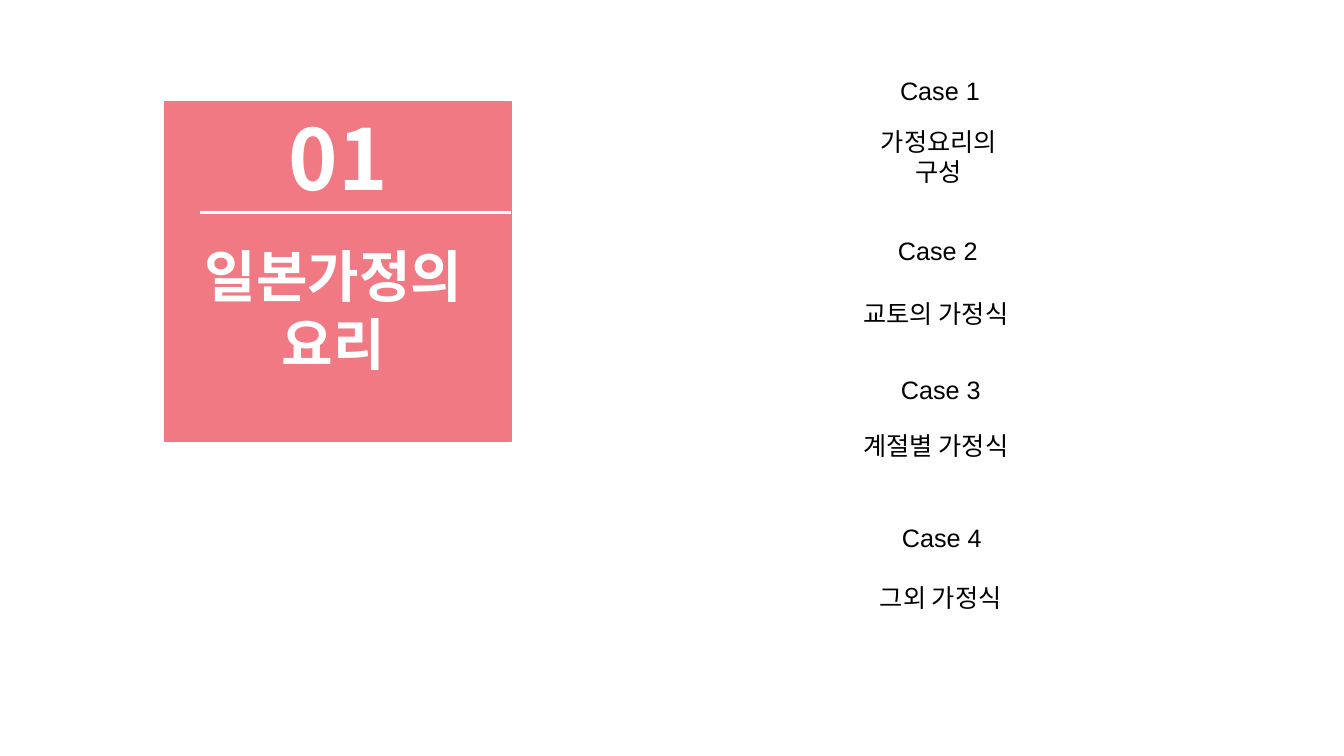
from lxml import etree
from pptx import Presentation
from pptx import util as u
from pptx.dml.color import RGBColor
from pptx.enum import shapes, text
from pptx.oxml import ns

KOREAN, LATIN = "Noto Sans CJK KR", "Arial"
PINK, WHITE, BLACK = "F07983", "FFFFFF", "000000"


def colour(hex_string):
    return RGBColor.from_string(hex_string)


class SlideBuilder:
    def __init__(self, deck):
        self.slide = deck.slides.add_slide(deck.slide_layouts[5])

    def panel(self, left, top, width, height, fill):
        panel = self.slide.shapes.add_shape(
            shapes.MSO_SHAPE.RECTANGLE, *map(u.Pt, (left, top, width, height)))
        panel.shadow.inherit = False
        panel.fill.solid()
        panel.fill.fore_color.rgb = colour(fill)
        panel.line.color.rgb = colour(fill)
        panel.line.width = u.Pt(1)

    def rule(self, left, right, y, stroke, weight):
        rule = self.slide.shapes.add_connector(
            shapes.MSO_CONNECTOR.STRAIGHT, *map(u.Pt, (left, y, right, y)))
        rule.line.color.rgb = colour(stroke)
        rule.line.width = u.Pt(weight)
        etree.SubElement(rule._element.spPr, ns.qn("a:effectLst"))

    def title(self, words, box, **style):
        title = self.slide.shapes.title
        title.left, title.top, title.width, title.height = map(u.Pt, box)
        # Bring the title in front of the panel
        title.element.getparent().append(title.element)
        self.set_words(title, words, **style)

    def label(self, words, box, **style):
        self.set_words(self.slide.shapes.add_textbox(*map(u.Pt, box)), words, **style)

    def set_words(self, holder, words, size=18, face=KOREAN, ink=BLACK,
                  bold=False, centred=False):
        frame = holder.text_frame
        frame.word_wrap = True
        frame.auto_size = text.MSO_AUTO_SIZE.SHAPE_TO_FIT_TEXT
        frame.vertical_anchor = text.MSO_ANCHOR.TOP
        frame.text = words
        paragraph = frame.paragraphs[0]
        paragraph.alignment = text.PP_ALIGN.CENTER if centred else text.PP_ALIGN.LEFT
        font = paragraph.font
        font.size, font.bold, font.name = u.Pt(size), bold, face
        font.color.rgb = colour(ink)
        # Korean glyphs take the East Asian typeface
        defaults = paragraph._p.pPr.find(ns.qn("a:defRPr"))
        etree.SubElement(defaults, ns.qn("a:ea"), typeface=face)


def main():
    deck = Presentation()
    deck.slide_width, deck.slide_height = u.Pt(960), u.Pt(540)
    page = SlideBuilder(deck)

    # Chapter panel
    heading = dict(ink=WHITE, bold=True, centred=True)
    page.panel(117.4, 72.7, 247.7, 242.6, PINK)
    page.rule(142.6, 365, 152, WHITE, 2.25)
    page.label("01", (155.5, 72.7, 172, 80), size=60, **heading)
    page.title("일본가정의 요리", (111, 169.2, 254.2, 104.4), size=40, **heading)

    # Cases: label left and top, dish, dish box, centred
    cases = [
        (635.8, 50.4, "가정요리의 구성", (610.6, 86.4, 120.2, 51), True),
        (634.3, 164.2, "교토의 가정식", (609.8, 209.5, 205.2, 28.8), False),
        (636.5, 263.5, "계절별 가정식", (609.8, 303.8, 205.2, 28.8), False),
        (637.2, 369.4, "그외 가정식", (621.4, 412.6, 213.8, 28.8), False),
    ]
    for number, (left, top, dish, dish_box, centred) in enumerate(cases, 1):
        page.label(f"Case {number}", (left, top, 88, 28.8), face=LATIN)
        page.label(dish, dish_box, centred=centred)

    deck.save("out.pptx")


if __name__ == "__main__":
    main()
